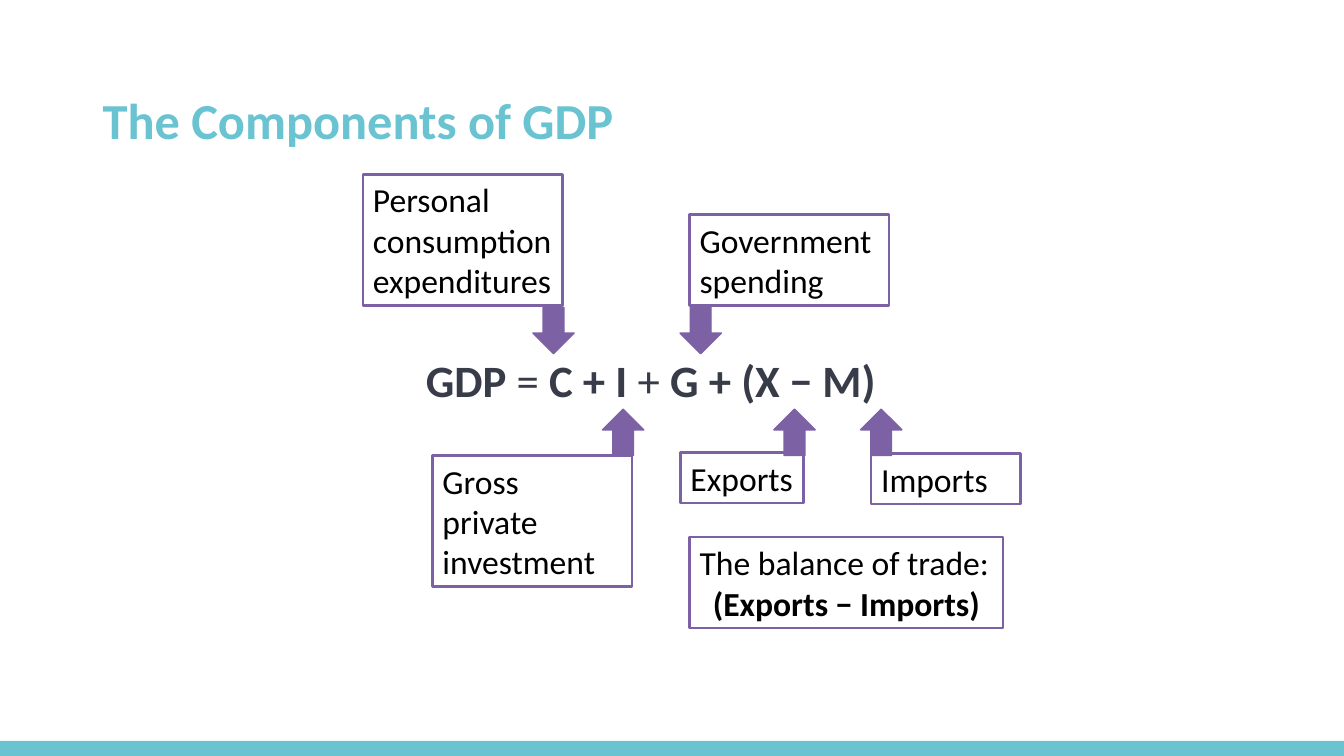
from pptx import Presentation
from pptx.dml.color import RGBColor
from pptx.enum.shapes import MSO_SHAPE
from pptx.enum.text import MSO_ANCHOR, PP_ALIGN
from pptx.util import Inches, Pt

RECTANGLE = MSO_SHAPE.RECTANGLE
DOWN, UP = MSO_SHAPE.DOWN_ARROW, MSO_SHAPE.UP_ARROW
TOP, MIDDLE = MSO_ANCHOR.TOP, MSO_ANCHOR.MIDDLE
LEFT, CENTER = PP_ALIGN.LEFT, PP_ALIGN.CENTER

COLORS = {"teal": "69C3D1", "purple": "7C61A5", "slate": "383C49", "black": "000000"}
FONT = "Calibri"
LINE_HEIGHT = 0.4
ARROW_WIDTH, ARROW_HEIGHT = 0.41, 0.46
ARROW_TOPS = {DOWN: 3.05, UP: 4.06}


def color(name):
    return RGBColor.from_string(COLORS[name])


def add_text(frame, paragraphs, size=24, color_name="black", alignments=(), anchor=TOP,
             line_spacing=None, wrap=True):
    frame.word_wrap = wrap
    frame.vertical_anchor = anchor
    for index, runs in enumerate(paragraphs):
        paragraph = frame.paragraphs[0] if index == 0 else frame.add_paragraph()
        paragraph.alignment = alignments[index] if alignments else LEFT
        if line_spacing:
            paragraph.line_spacing = line_spacing
        for text, bold in runs:
            run = paragraph.add_run()
            run.text = text
            run.font.name = FONT
            run.font.size = Pt(size)
            run.font.bold = bold
            run.font.color.rgb = color(color_name)


def add_figure(slide, kind, box, fill=None, line=None, line_width=1):
    shape = slide.shapes.add_shape(kind, *map(Inches, box))
    shape.shadow.inherit = False
    if fill:
        shape.fill.solid()
        shape.fill.fore_color.rgb = color(fill)
    else:
        shape.fill.background()
    if line:
        shape.line.color.rgb = color(line)
        shape.line.width = Pt(line_width)
    else:
        shape.line.fill.background()
    return shape


def add_title(slide, box):
    frame = slide.shapes.add_textbox(*map(Inches, box)).text_frame
    add_text(frame, [[("The Components of GDP", True)]], size=36, color_name="teal",
             anchor=MIDDLE, line_spacing=0.9)


def add_formula(slide, box):
    frame = slide.shapes.add_textbox(*map(Inches, box)).text_frame
    runs = [("GDP", True), (" = ", False), ("C + I", True), (" + ", False), ("G + (X − M)", True)]
    add_text(frame, [runs], size=32, color_name="slate", alignments=[CENTER])


def add_label(slide, left, top, width, paragraphs, **text_format):
    height = LINE_HEIGHT * len(paragraphs) + 0.1
    shape = add_figure(slide, RECTANGLE, (left, top, width, height),
                       line="purple", line_width=1.75)
    add_text(shape.text_frame, paragraphs, **text_format)


def add_callout(slide, left, top, width, lines, direction, arrow_offset, wrap=True):
    add_label(slide, left, top, width, [[(line, False)] for line in lines], wrap=wrap)
    arrow_left = left + arrow_offset - ARROW_WIDTH / 2
    add_figure(slide, direction, (arrow_left, ARROW_TOPS[direction], ARROW_WIDTH, ARROW_HEIGHT),
               fill="purple", line="purple")


def build_components_slide(presentation):
    slide = presentation.slides.add_slide(presentation.slide_layouts[6])
    add_figure(slide, RECTANGLE, (0, 7.35, 13.33, 0.15), fill="teal")
    add_title(slide, (0.92, 0.89, 11.5, 0.66))
    add_formula(slide, (2.16, 3.45, 8.59, 0.64))
    add_callout(slide, 3.6, 1.73, 1.98, ["Personal", "consumption", "expenditures"], DOWN, 1.89)
    add_callout(slide, 6.84, 2.13, 1.98, ["Government", "spending"], DOWN, 0.11)
    add_callout(slide, 4.29, 4.52, 1.98, ["Gross", "private", "investment"], UP, 1.89)
    add_callout(slide, 6.75, 4.49, 1.22, ["Exports"], UP, 1.13, wrap=False)
    add_callout(slide, 8.64, 4.5, 1.48, ["Imports"], UP, 0.1)
    add_label(slide, 6.84, 5.33, 3.11,
              [[("The balance of trade:", False)], [("(Exports − Imports)", True)]],
              alignments=[LEFT, CENTER])


def main():
    presentation = Presentation()
    presentation.slide_width = Inches(13.33)
    presentation.slide_height = Inches(7.5)
    build_components_slide(presentation)
    presentation.save("out.pptx")


if __name__ == "__main__":
    main()
